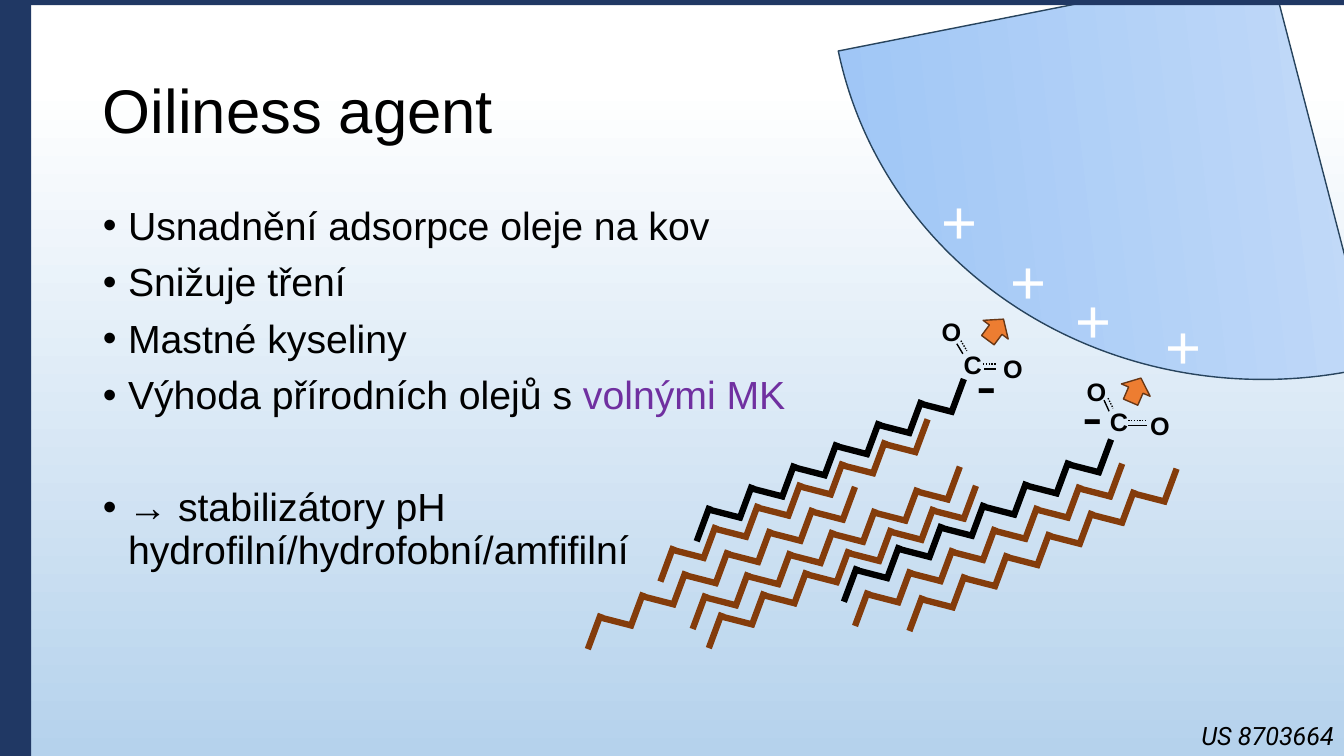
from lxml.etree import SubElement
from pptx import Presentation
from pptx.dml.color import RGBColor
from pptx.enum.dml import MSO_LINE
from pptx.enum.shapes import MSO_CONNECTOR, MSO_SHAPE
from pptx.enum.text import MSO_ANCHOR, MSO_AUTO_SIZE, PP_ALIGN
from pptx.oxml.ns import qn
from pptx.util import Inches, Pt

COLORS = {name: RGBColor.from_string(value) for name, value in {
    "black": "000000", "white": "FFFFFF", "sky": "B5D2EC", "navy": "203864",
    "purple": "7030A0", "oil": "843C0B", "arrow": "ED7D31", "arrow_edge": "683715",
    "metal_dark": "9AC3F5", "metal_light": "E1EBFB", "metal_edge": "28445D",
}.items()}


def set_gradient(fill, first, last, start=0):
    """Fill downwards from one colour to another, beginning at a share of the height."""
    fill.gradient()
    fill.gradient_angle = 270
    for stop, color, position in zip(fill.gradient_stops, (first, last), (start, 1)):
        stop.color.rgb = COLORS[color]
        stop.position = position


def add_line(shapes, x1, y1, x2, y2, color="black", width=1, dash=None):
    line = shapes.add_connector(MSO_CONNECTOR.STRAIGHT, *map(Inches, (x1, y1, x2, y2)))
    line.line.color.rgb = COLORS[color]
    line.line.width = Pt(width)
    if dash:
        line.line.dash_style = dash
    SubElement(line._element.spPr, qn("a:effectLst"))


prs = Presentation()
prs.slide_width, prs.slide_height = Inches(13.33), Inches(7.5)
s = prs.slides.add_slide(prs.slide_layouts[1])
set_gradient(s.background.fill, "white", "sky", 0.11)

# Title and list
title, body = s.placeholders
for sp, box in ((title, (0.92, 0.4, 11.5, 1.45)), (body, (0.92, 2, 7.2, 4.76))):
    sp.left, sp.top, sp.width, sp.height = map(Inches, box)
    sp.text_frame.auto_size = MSO_AUTO_SIZE.NONE

title.text_frame.vertical_anchor = MSO_ANCHOR.MIDDLE
p = title.text_frame.paragraphs[0]
p.text = "Oiliness agent"
p.alignment = PP_ALIGN.LEFT
p.line_spacing = 0.9
p.font.size, p.font.name, p.font.color.rgb = Pt(44), "Arial", COLORS["black"]

tf = body.text_frame
tf.text = "\n".join((
    "Usnadnění adsorpce oleje na kov",
    "Snižuje tření",
    "Mastné kyseliny",
    "Výhoda přírodních olejů s ",
    "→ stabilizátory pH\vhydrofilní/hydrofobní/amfifilní",
))
for p in tf.paragraphs:
    p.line_spacing = 0.9
    p.space_before = Pt(10)
    p.font.size, p.font.name, p.font.color.rgb = Pt(28), "Arial", COLORS["black"]
    pPr = p._p.get_or_add_pPr()
    pPr.set("marL", str(Inches(0.25)))
    pPr.set("indent", str(Inches(-0.25)))
r = tf.paragraphs[3].add_run()
r.text = "volnými MK"
r.font.color.rgb = COLORS["purple"]
tf.paragraphs[4].space_before = Pt(50)

# Metal surface
metal = s.shapes.add_shape(MSO_SHAPE.PIE, *map(Inches, (8.49, -4.7, 8.2, 8.72)))
metal.rotation = 263.3
metal.adjustments[0], metal.adjustments[1] = 103.28, 159.31
metal.shadow.inherit = False
set_gradient(metal.fill, "metal_dark", "metal_light")
metal.line.color.rgb = COLORS["metal_edge"]
metal.line.width = Pt(1)

# Atoms, charges and patent number
labels = [
    ("C", 9.46, 3.42, 0.37), ("O", 9.24, 3.09, 0.37), ("O", 9.85, 3.46, 0.48),
    ("C", 10.91, 3.98, 0.37), ("O", 10.68, 3.68, 0.57), ("O", 11.31, 4.02, 0.48),
    ("+", 9.24, 1.77, 0.57), ("+", 9.92, 2.36, 0.57),
    ("+", 10.57, 2.75, 0.57), ("+", 11.46, 3.01, 0.57),
    ("-", 9.59, 3.38, 0.51), ("-", 10.64, 3.69, 0.49),
    ("US 8703664", 11.6, 7.1, 1.73),
]
for text, x, y, width in labels:
    is_charge, is_atom = text in "+-", text in "CO"
    box = s.shapes.add_textbox(*map(Inches, (x, y, width, 0.84 if is_charge else 0.4)))
    box.text_frame.word_wrap = True
    p = box.text_frame.paragraphs[0]
    p.text = text
    p.font.size = Pt(44 if is_charge else 18)
    p.font.name = "Arial" if is_charge or is_atom else "Roboto"
    p.font.color.rgb = COLORS["white" if text == "+" else "black"]
    p.font.bold = is_atom
    if not (is_charge or is_atom):
        p.font.italic = True
        p.alignment = PP_ALIGN.RIGHT

# Carboxyl bonds: a solid and a dotted line each
bonds = [
    ((9.49, 3.41, 9.55, 3.51), (9.53, 3.38, 9.59, 3.48)),
    ((9.76, 3.66, 9.88, 3.66), (9.75, 3.61, 9.88, 3.61)),
    ((10.95, 3.97, 11, 4.08), (10.99, 3.95, 11.04, 4.05)),
    ((11.19, 4.22, 11.38, 4.22), (11.19, 4.17, 11.38, 4.17)),
]
for solid, dotted in bonds:
    add_line(s.shapes, *solid)
    add_line(s.shapes, *dotted, dash=MSO_LINE.ROUND_DOT)

for x, y, rotation in ((9.72, 3.14, 216.7), (11.11, 3.74, 203.4)):
    arrow = s.shapes.add_shape(MSO_SHAPE.DOWN_ARROW, *map(Inches, (x, y, 0.31, 0.26)))
    arrow.rotation = rotation
    arrow.shadow.inherit = False
    arrow.fill.solid()
    arrow.fill.fore_color.rgb = COLORS["arrow"]
    arrow.line.color.rgb = COLORS["arrow_edge"]
    arrow.line.width = Pt(1)

# Hydrocarbon chains: seven steep links joined by six flat ones
STEEP_LINKS, STEP_X, STEP_Y = 7, 0.42, -0.21
chains = [
    (6.55, 5.77, "oil"), (5.83, 6.44, "oil"), (6.87, 6.24, "oil"), (7.03, 6.43, "oil"),
    (6.91, 5.37, "black"), (8.37, 5.97, "black"), (8.48, 6.21, "oil"), (9.02, 6.26, "oil"),
]
for left, bottom, color in chains:
    chain = s.shapes.add_group_shape()
    for i in range(STEEP_LINKS):
        x, y = left + i * STEP_X, bottom + i * STEP_Y
        add_line(chain.shapes, x, y, x + 0.13, y - 0.35, color, 4.5)
        if i < STEEP_LINKS - 1:
            add_line(chain.shapes, x + 0.1, y - 0.32, x + 0.45, y - 0.23, color, 4.5)

# Frame bars
for box in ((0, 0.04, 0.31, 7.46), (0, 0, 13.33, 0.05)):
    bar = s.shapes.add_shape(MSO_SHAPE.RECTANGLE, *map(Inches, box))
    bar.shadow.inherit = False
    bar.fill.solid()
    bar.fill.fore_color.rgb = COLORS["navy"]
    bar.line.fill.background()

prs.save("out.pptx")
